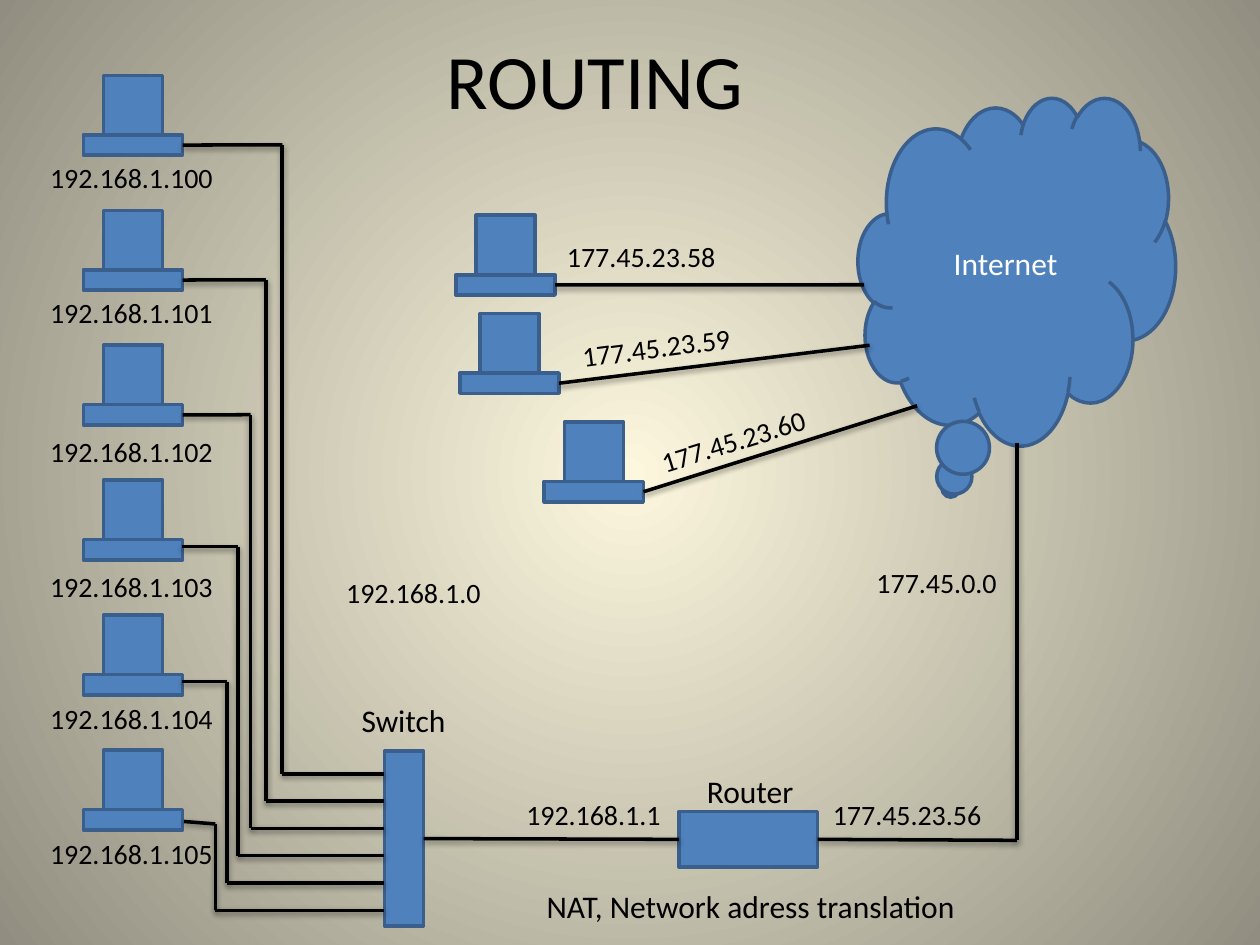
from dataclasses import dataclass

from pptx import Presentation
from pptx import util as u
from pptx.dml.color import RGBColor
from pptx.enum import shapes, text
from pptx.oxml import parse_xml
from pptx.oxml.ns import nsdecls

HUES = {"blue": "4F81BD", "edge": "3A5F8C", "ink": "000000",
        "white": "FFFFFF", "glow": "FCF7DD", "rim": "918E81"}
KINDS = shapes.MSO_SHAPE
ALIGNS = text.PP_ALIGN


@dataclass
class Joint:
    shape: object
    site: int


@dataclass
class Client:
    label: float
    bend: float
    start: tuple | None = None
    drop: float = 0


@dataclass
class Host:
    left: float
    top: float
    end: tuple
    name: str
    spot: tuple
    turn: float = 0


@dataclass
class Label:
    words: str
    left: float
    top: float
    width: float
    size: int = 16


CLIENTS = [
    Client(3.12, 5.69),
    Client(5.84, 5.36),
    Client(8.64, 5.05),
    Client(11.35, 4.8, (3.66, 11.02)),
    Client(14.02, 4.58, (3.66, 13.74)),
    Client(16.74, 4.34, (3.71, 16.56), 0.05),
]
HOSTS = [
    Host(9.19, 4.34, (17.42, 5.74), "177.45.23.58", (11.18, 4.7)),
    Host(9.27, 6.32, (17.53, 6.96), "177.45.23.59", (11.48, 6.53), 352.6),
    Host(10.97, 8.51, (18.49, 8.18), "177.45.23.60", (13.03, 8.41), 342.8),
]
LABELS = [
    Label("Switch", 7.04, 14, 2.24, 18),
    Label("Router", 14, 15.44, 2.29, 18),
    Label("192.168.1.0", 6.73, 11.48, 3.25),
    Label("177.45.0.0", 17.42, 11.28, 2.97),
    Label("192.168.1.1", 10.36, 15.95, 3.25),
    Label("177.45.23.56", 16.54, 15.95, 3.56),
    Label("NAT, Network adress translation", 10.77, 17.75, 8.81, 18),
]


def hue(name: str) -> RGBColor:
    return RGBColor.from_string(HUES[name])


def write(frame, words: str, *, size: int = 16, ink: str = "ink",
          align=ALIGNS.LEFT, wrap: bool = False) -> None:
    frame.word_wrap = wrap
    if not wrap:
        frame.auto_size = text.MSO_AUTO_SIZE.SHAPE_TO_FIT_TEXT
    para = frame.paragraphs[0]
    para.alignment = align
    run = para.add_run()
    run.text = words
    run.font.size = u.Pt(size)
    run.font.name = "Calibri"
    run.font.color.rgb = hue(ink)


def label(slide, item: Label, turn: float = 0) -> None:
    high = 1.02 if item.size == 18 else 0.94
    box = slide.shapes.add_textbox(
        u.Cm(item.left), u.Cm(item.top), u.Cm(item.width), u.Cm(high))
    box.rotation = turn
    write(box.text_frame, item.words, size=item.size)


def block(owner, left: float, top: float, width: float, high: float,
          kind=KINDS.RECTANGLE):
    shape = owner.shapes.add_shape(
        kind, u.Cm(left), u.Cm(top), u.Cm(width), u.Cm(high))
    shape.shadow.inherit = False
    shape.fill.solid()
    shape.fill.fore_color.rgb = hue("blue")
    shape.line.color.rgb = hue("edge")
    shape.line.width = u.Pt(2)
    return shape


def laptop(slide, left: float, top: float):
    group = slide.shapes.add_group_shape()
    block(group, left + 0.41, top, 1.19, 1.2)
    return block(group, left, top + 1.2, 2, 0.41)


def wire(slide, start: tuple | Joint, end: tuple | Joint) -> None:
    line = slide.shapes.add_connector(shapes.MSO_CONNECTOR.STRAIGHT, 0, 0, 0, 0)
    if isinstance(start, Joint):
        line.begin_connect(start.shape, start.site)
    else:
        line.begin_x, line.begin_y = map(u.Cm, start)
    if isinstance(end, Joint):
        line.end_connect(end.shape, end.site)
    else:
        line.end_x, line.end_y = map(u.Cm, end)
    line.line.color.rgb = hue("ink")
    line.line.width = u.Pt(2)
    line._element.spPr.append(parse_xml(
        f'<a:effectLst {nsdecls("a")}><a:outerShdw blurRad="40000" dist="20000" '
        f'dir="5400000" rotWithShape="0"><a:srgbClr val="{HUES["ink"]}">'
        '<a:alpha val="38000"/></a:srgbClr></a:outerShdw></a:effectLst>'))


def paint(slide) -> None:
    stops = "".join(
        f'<a:gs pos="{pos}"><a:srgbClr val="{HUES[name]}"/></a:gs>'
        for pos, name in ((0, "glow"), (100000, "rim")))
    slide.element.cSld.insert(0, parse_xml(
        f'<p:bg {nsdecls("p", "a")}><p:bgPr><a:gradFill rotWithShape="1">'
        f'<a:gsLst>{stops}</a:gsLst><a:path path="circle">'
        '<a:fillToRect l="50000" t="50000" r="50000" b="50000"/></a:path>'
        '</a:gradFill><a:effectLst/></p:bgPr></p:bg>'))


def main() -> None:
    deck = Presentation()
    deck.slide_width, deck.slide_height = u.Cm(25.4), u.Cm(19.05)
    slide = deck.slides.add_slide(deck.slide_layouts[6])
    paint(slide)

    cloud = block(slide, 17.3, 1.96, 6.4, 7.01, KINDS.CLOUD_CALLOUT)
    cloud.text_frame.vertical_anchor = text.MSO_ANCHOR.MIDDLE
    write(cloud.text_frame, "Internet", size=18, ink="white",
          align=ALIGNS.CENTER, wrap=True)
    switch = block(slide, 7.75, 15.14, 0.79, 3.53)
    router = block(slide, 13.69, 16.36, 2.79, 1.12)

    for row, item in enumerate(CLIENTS):
        top = 1.52 + 2.72 * row
        base = laptop(slide, 1.68, top)
        label(slide, Label(f"192.168.1.{100 + row}", 0.76, item.label, 3.84))
        port = 15.6 + 0.55 * row
        start = item.start or Joint(base, 3)
        turn = (item.start[1] if item.start else top + 1.4) + item.drop
        wire(slide, start, (item.bend, turn))
        wire(slide, (item.bend, turn), (item.bend, port))
        wire(slide, (item.bend, port), (7.75, port))

    corner = (20.5, 16.94)
    wire(slide, Joint(switch, 3), Joint(router, 1))
    wire(slide, Joint(router, 3), corner)
    wire(slide, (20.5, 8.94), corner)

    for host in HOSTS:
        base = laptop(slide, host.left, host.top)
        wire(slide, Joint(base, 3), host.end)
        label(slide, Label(host.name, *host.spot, 3.56), host.turn)

    for item in LABELS:
        label(slide, item)
    title = slide.shapes.add_textbox(u.Cm(0.56), u.Cm(0.53), u.Cm(22.86), u.Cm(3.18))
    write(title.text_frame, "ROUTING", size=44, align=ALIGNS.CENTER, wrap=True)
    deck.save("out.pptx")


if __name__ == "__main__":
    main()
